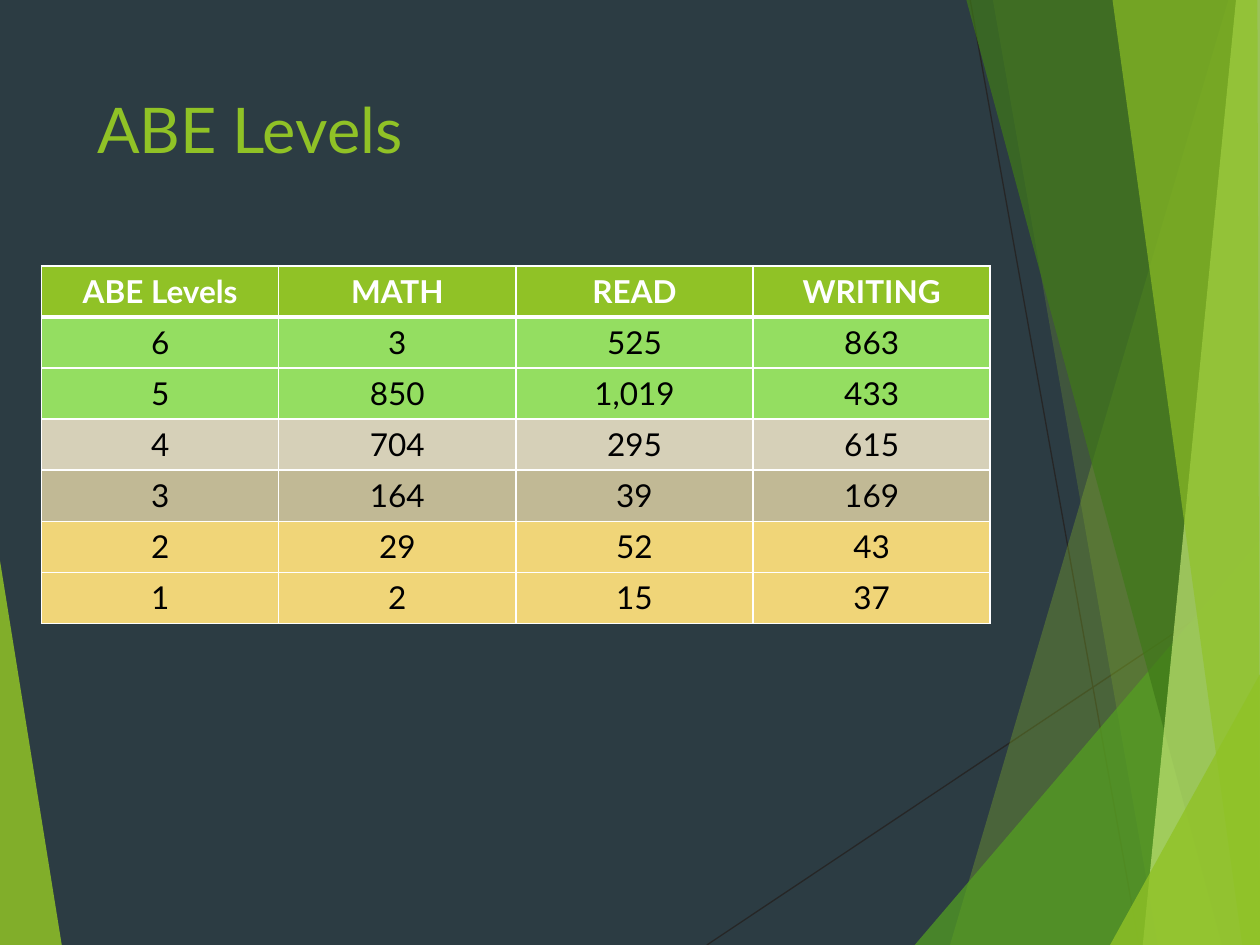
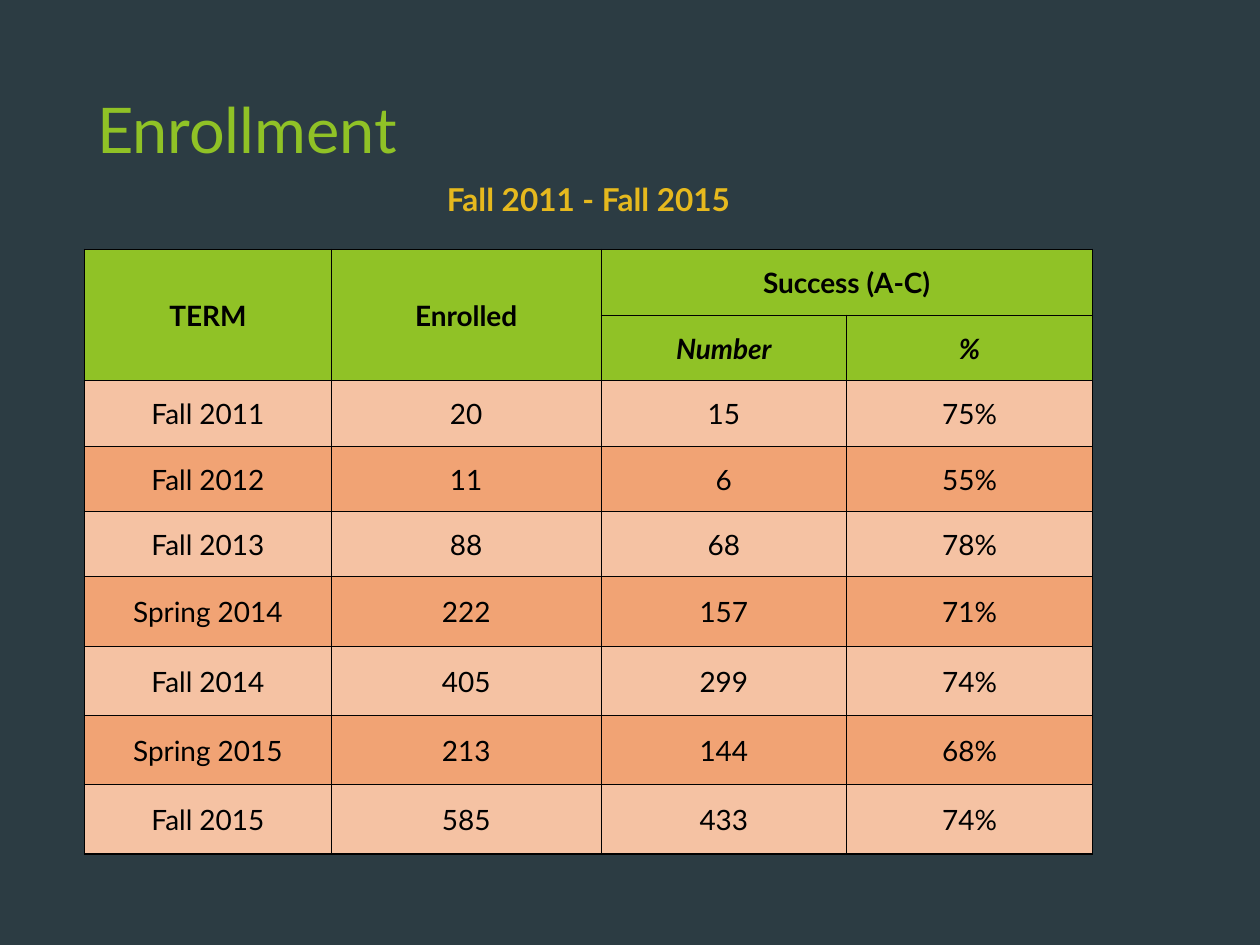
from dataclasses import dataclass

from lxml.etree import SubElement
from pptx import Presentation
from pptx.dml.color import RGBColor
from pptx.enum.shapes import MSO_CONNECTOR
from pptx.enum.text import MSO_ANCHOR, PP_ALIGN
from pptx.oxml import parse_xml
from pptx.oxml.ns import nsdecls, qn
from pptx.presentation import Presentation as Deck
from pptx.slide import Slide
from pptx.table import Table, _Cell
from pptx.util import Inches, Pt

FONT = "Lato"
SLATE = RGBColor(0x2C, 0x3C, 0x43)
CHARCOAL = RGBColor(0x26, 0x26, 0x26)
LIME = RGBColor(0x90, 0xC2, 0x26)
GREEN = RGBColor(0x54, 0xA0, 0x21)
FOREST = RGBColor(0x3F, 0x78, 0x19)
PALE_LIME = RGBColor(0xC0, 0xE4, 0x74)
LIGHT_GREEN = RGBColor(0x94, 0xDE, 0x61)
SAND = RGBColor(0xD6, 0xD0, 0xB8)
KHAKI = RGBColor(0xC1, 0xB9, 0x95)
YELLOW = RGBColor(0xF0, 0xD5, 0x78)
GOLD = RGBColor(0xE6, 0xB9, 0x1E)
PEACH = RGBColor(0xF5, 0xC2, 0xA3)
ORANGE = RGBColor(0xF1, 0xA3, 0x74)
WHITE = RGBColor(0xFF, 0xFF, 0xFF)
BLACK = RGBColor(0, 0, 0)

Point = tuple[float, float]


@dataclass(frozen=True)
class Facet:
    points: tuple[Point, ...]
    color: RGBColor
    opacity: int


@dataclass(frozen=True)
class TextStyle:
    size: float
    color: RGBColor
    bold: bool = False
    italic: bool = False


@dataclass(frozen=True)
class Borders:
    left: float
    right: float
    top: float
    bottom: float


TITLE = TextStyle(36, LIME)

RAYS = (
    ((5.61, 7.5), (10, 4.57)),
    ((7.7, 0), (9.04, 7.5)),
)
FACETS = (
    Facet(((0, 4.45), (0.49, 7.5), (0, 7.5)), LIME, 85),
    Facet(((9.75, 0), (7.54, 7.5), (10, 7.5), (10, 0)), LIME, 30),
    Facet(((7.88, 0), (9.19, 7.5), (10, 7.5), (10, 0)), LIME, 20),
    Facet(((7.26, 7.5), (10, 4.29), (10, 7.5)), GREEN, 72),
    Facet(((7.67, 0), (9.7, 7.5), (10, 7.5), (10, 0)), FOREST, 70),
    Facet(((9.81, 0), (9.07, 7.5), (10, 7.5), (10, 0)), PALE_LIME, 70),
    Facet(((8.83, 0), (9.86, 7.5), (10, 7.5), (9.98, 0)), LIME, 65),
    Facet(((8.81, 7.5), (10, 5.35), (10, 7.5)), LIME, 80),
)

ABE_ROWS = (
    ("ABE Levels", "MATH", "READ", "WRITING"),
    ("6", "3", "525", "863"),
    ("5", "850", "1,019", "433"),
    ("4", "704", "295", "615"),
    ("3", "164", "39", "169"),
    ("2", "29", "52", "43"),
    ("1", "2", "15", "37"),
)
ABE_FILLS = (LIME, LIGHT_GREEN, LIGHT_GREEN, SAND, KHAKI, YELLOW, YELLOW)

ENROLLMENT_ROWS = (
    ("Fall 2011 - Fall 2015", "", "", ""),
    ("TERM", "Enrolled", "Success (A-C)", ""),
    ("", "", "Number", "%"),
    ("Fall 2011", "20", "15", "75%"),
    ("Fall 2012", "11", "6", "55%"),
    ("Fall 2013", "88", "68", "78%"),
    ("Spring 2014", "222", "157", "71%"),
    ("Fall 2014", "405", "299", "74%"),
    ("Spring 2015", "213", "144", "68%"),
    ("Fall 2015", "585", "433", "74%"),
)
ENROLLMENT_MERGES = (
    ((0, 0), (0, 3)),
    ((1, 0), (2, 0)),
    ((1, 1), (2, 1)),
    ((1, 2), (1, 3)),
)
ENROLLMENT_STYLES = (
    TextStyle(18, GOLD, bold=True),
    TextStyle(16, BLACK, bold=True),
    TextStyle(16, BLACK, bold=True, italic=True),
)


def add_span(para, text: str, style: TextStyle) -> None:
    span = para.add_run()
    span.text = text
    font = span.font
    font.name, font.size = FONT, Pt(style.size)
    font.bold, font.italic = style.bold, style.italic
    font.color.rgb = style.color


def add_page(deck: Deck, title: str) -> Slide:
    page = deck.slides.add_slide(deck.slide_layouts[5])
    box = page.shapes.title
    box.left, box.top = Inches(0.67), Inches(0.67)
    box.width, box.height = Inches(6.94), Inches(1.44)
    box.text_frame.vertical_anchor = MSO_ANCHOR.TOP
    para = box.text_frame.paragraphs[0]
    para.alignment = PP_ALIGN.LEFT
    add_span(para, title, TITLE)
    return page


def add_ray(page: Slide, start: Point, end: Point) -> None:
    ends = [Inches(value) for value in (*start, *end)]
    ray = page.shapes.add_connector(MSO_CONNECTOR.STRAIGHT, *ends)
    ray.line.color.rgb = CHARCOAL
    ray.line.width = Pt(0.75)
    SubElement(ray._element.spPr, qn("a:effectLst"))


def add_facet(page: Slide, facet: Facet) -> None:
    first, *rest = [(Inches(x), Inches(y)) for x, y in facet.points]
    builder = page.shapes.build_freeform(*first)
    builder.add_line_segments(rest, close=True)
    shape = builder.convert_to_shape()
    shape.shadow.inherit = False
    shape.line.fill.background()
    shape.fill.solid()
    shape.fill.fore_color.rgb = facet.color
    color = shape._element.spPr.find(".//" + qn("a:srgbClr"))
    SubElement(color, qn("a:alpha")).set("val", str(facet.opacity * 1000))


def set_borders(cell: _Cell, color: RGBColor, borders: Borders) -> None:
    properties = cell._tc.get_or_add_tcPr()
    sides = (("lnL", borders.left), ("lnR", borders.right), ("lnT", borders.top), ("lnB", borders.bottom))
    for index, (tag, width) in enumerate(sides):
        paint = f'<a:solidFill><a:srgbClr val="{color}"/></a:solidFill>' if width else "<a:noFill/>"
        line = f'<a:{tag} {nsdecls("a")} w="{Pt(width)}">{paint}</a:{tag}>'
        properties.insert(index, parse_xml(line))


def add_table(page: Slide, left: float, top: float, widths: list[float], heights: list[float]) -> Table:
    frame = page.shapes.add_table(
        len(heights), len(widths), Inches(left), Inches(top), Inches(sum(widths)), Inches(sum(heights))
    )
    table = frame.table
    table.first_row = table.horz_banding = False
    for column, width in zip(table.columns, widths):
        column.width = Inches(width)
    for row, height in zip(table.rows, heights):
        row.height = Inches(height)
    return table


def fill_cell(cell: _Cell, text: str, style: TextStyle, fill: RGBColor | None) -> None:
    if fill is None:
        cell.fill.background()
    else:
        cell.fill.solid()
        cell.fill.fore_color.rgb = fill
    if text:
        para = cell.text_frame.paragraphs[0]
        para.alignment = PP_ALIGN.CENTER
        add_span(para, text, style)


def build_abe_levels(deck: Deck) -> None:
    page = add_page(deck, "ABE Levels")
    for start, end in RAYS:
        add_ray(page, start, end)
    for facet in FACETS:
        add_facet(page, facet)
    count = len(ABE_ROWS)
    table = add_table(page, 0.33, 2.11, [7.53 / 4] * 4, [2.84 / count] * count)
    for row, texts in enumerate(ABE_ROWS):
        style = TextStyle(18, BLACK if row else WHITE, bold=row == 0)
        borders = Borders(1, 1, 3 if row == 1 else 1, 3 if row == 0 else 1)
        for column, text in enumerate(texts):
            cell = table.cell(row, column)
            fill_cell(cell, text, style, ABE_FILLS[row])
            set_borders(cell, WHITE, borders)


def enrollment_fill(row: int) -> RGBColor | None:
    if row == 0:
        return None
    if row < 3:
        return LIME
    return PEACH if row % 2 else ORANGE


def enrollment_borders(row: int, column: int) -> Borders:
    if row == 0:
        return Borders(0, 0, 0, 1)
    last_row = len(ENROLLMENT_ROWS) - 1
    outer = (column == 0, column == 3, row == 1, row == last_row)
    return Borders(*(1 if edge else 0.5 for edge in outer))


def build_enrollment(deck: Deck) -> None:
    page = add_page(deck, "Enrollment")
    heights = [0.81] + [0.52] * 5 + [0.55] * 4
    table = add_table(page, 0.67, 1.17, [1.96, 2.14, 1.95, 1.95], heights)
    for start, end in ENROLLMENT_MERGES:
        table.cell(*start).merge(table.cell(*end))
    for row, texts in enumerate(ENROLLMENT_ROWS):
        style = ENROLLMENT_STYLES[row] if row < 3 else TextStyle(16, BLACK)
        for column, text in enumerate(texts):
            cell = table.cell(row, column)
            cell.vertical_anchor = MSO_ANCHOR.MIDDLE
            cell.margin_left = cell.margin_right = cell.margin_top = Inches(0.01)
            cell.margin_bottom = 0
            fill_cell(cell, text, style, enrollment_fill(row))
            set_borders(cell, BLACK, enrollment_borders(row, column))


def main() -> None:
    deck = Presentation()
    deck.slide_width, deck.slide_height = Inches(10), Inches(7.5)
    background = deck.slide_master.background.fill
    background.solid()
    background.fore_color.rgb = SLATE
    build_abe_levels(deck)
    build_enrollment(deck)
    deck.save("out.pptx")


if __name__ == "__main__":
    main()
